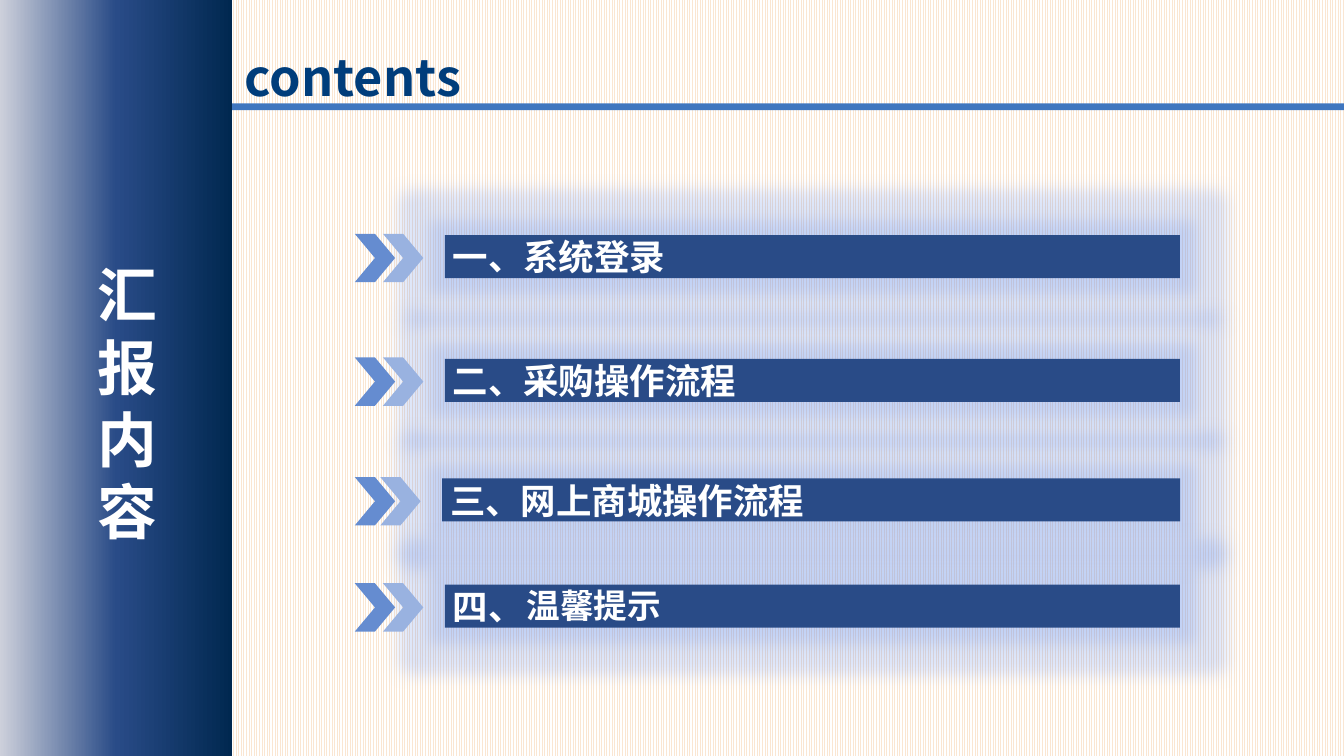
import copy
import pptx
import pptx.util
from lxml import etree
from pptx.dml.color import RGBColor
from pptx.enum.dml import MSO_PATTERN
from pptx.enum.shapes import MSO_SHAPE
from pptx.enum.text import MSO_ANCHOR, PP_ALIGN
from pptx.oxml.ns import qn
from pptx.util import Inches

TITLE = "contents"
SIDE = "汇报内容"
ROWS = [  # text, top, left edge of bar
    ("一、系统登录", 1.75, 3.31),
    ("二、采购操作流程", 2.67, 3.31),
    ("三、网上商城操作流程", 3.56, 3.29),
    ("四、", 4.35, 3.31),
]
EXTRA = "温馨提示"

FONT = "Noto Sans CJK SC"
WHITE = RGBColor(0xFF, 0xFF, 0xFF)
CREAM = RGBColor(0xFA, 0xE6, 0xD2)
NAVY = RGBColor(0x00, 0x28, 0x50)
BLUE = RGBColor(0x29, 0x4B, 0x87)
GREY = RGBColor(0xCD, 0xD0, 0xDB)
RULE = RGBColor(0x3F, 0x76, 0xBF)
INK = RGBColor(0x00, 0x3D, 0x7B)
PALE = RGBColor(0x99, 0xB2, 0xE0)
MID = RGBColor(0x65, 0x8C, 0xD0)
GLOW = RGBColor(0x6E, 0x93, 0xE8)
RIGHT = 8.78
WIDE = 10
HIGH = WIDE * 9 / 16


def put_text(shape, text, size, color=WHITE, align=PP_ALIGN.LEFT,
             anchor=MSO_ANCHOR.TOP, inset=(0.1, 0.05, 0.1, 0.05),
             wrap=True, pitch=None):
    frame = shape.text_frame
    frame.word_wrap = wrap
    frame.vertical_anchor = anchor
    (frame.margin_left, frame.margin_top,
     frame.margin_right, frame.margin_bottom) = map(Inches, inset)
    para = frame.paragraphs[0]
    para.alignment = align
    if pitch:
        para.line_spacing = pptx.util.Pt(pitch)
    run = para.add_run()
    run.text = text
    font = run.font
    font.name, font.size, font.bold = FONT, pptx.util.Pt(size), True
    font.color.rgb = color
    props = run._r.get_or_add_rPr()
    etree.SubElement(props, qn("a:ea")).set("typeface", FONT)


def add_block(shapes, kind, box, color=None):
    shape = shapes.add_shape(kind, *map(Inches, box))
    shape.shadow.inherit = False
    shape.line.fill.background()
    if color is not None:
        shape.fill.solid()
        shape.fill.fore_color.rgb = color
    return shape


def add_glow(shape, radius, alpha):
    effects = shape._element.spPr.find(qn("a:effectLst"))
    glow = etree.SubElement(effects, qn("a:glow"), rad=str(Inches(radius)))
    color = etree.SubElement(glow, qn("a:srgbClr"), val=str(GLOW))
    etree.SubElement(color, qn("a:alpha"), val=str(alpha * 1000))


def add_row(shapes, text, top, left):
    group = shapes.add_group_shape().shapes
    bar = add_block(group, MSO_SHAPE.RECTANGLE,
                    (left, top, RIGHT - left, 0.32), BLUE)
    add_glow(bar, 0.23, 23)
    put_text(bar, text, 19, anchor=MSO_ANCHOR.MIDDLE, inset=(0.06, 0, 0, 0))
    for x, color in ((left - 0.46, PALE), (2.64, MID)):
        add_block(group, MSO_SHAPE.CHEVRON, (x, top - 0.01, 0.3, 0.36), color)


def add_panel(shapes):
    panel = add_block(shapes, MSO_SHAPE.RECTANGLE, (0, 0, 1.73, HIGH))
    fill = panel.fill
    fill.gradient()
    fill.gradient_angle = 0
    stops = panel._element.spPr.find(qn("a:gradFill")).find(qn("a:gsLst"))
    stops.append(copy.deepcopy(stops[0]))
    for stop, spot, color in zip(fill.gradient_stops, (0, 0.5, 1),
                                 (GREY, BLUE, NAVY)):
        stop.position = spot
        stop.color.rgb = color


def main():
    deck = pptx.Presentation()
    deck.slide_width, deck.slide_height = Inches(WIDE), Inches(HIGH)
    slide = deck.slides.add_slide(deck.slide_layouts[5])
    shapes = slide.shapes

    back = slide.background.fill
    back.patterned()
    back.pattern = MSO_PATTERN.NARROW_VERTICAL
    back.fore_color.rgb, back.back_color.rgb = CREAM, WHITE

    title = shapes.title
    title.left, title.top = Inches(1.57), Inches(0.29)
    title.width, title.height = Inches(2.11), Inches(0.56)
    put_text(title, TITLE, 27, INK, align=PP_ALIGN.CENTER)

    add_block(shapes, MSO_SHAPE.RECTANGLE, (0, 0.77, WIDE, 0.05), RULE)
    for row in ROWS:
        add_row(shapes, *row)
    add_panel(shapes)

    side = shapes.add_textbox(*map(Inches, (0.63, 1.87, 0.71, 2.26)))
    put_text(side, SIDE, 32, pitch=38.6)
    extra = shapes.add_textbox(*map(Inches, (3.82, 4.3, 1.21, 0.4)))
    put_text(extra, EXTRA, 18, wrap=False)

    deck.save("out.pptx")


if __name__ == "__main__":
    main()
